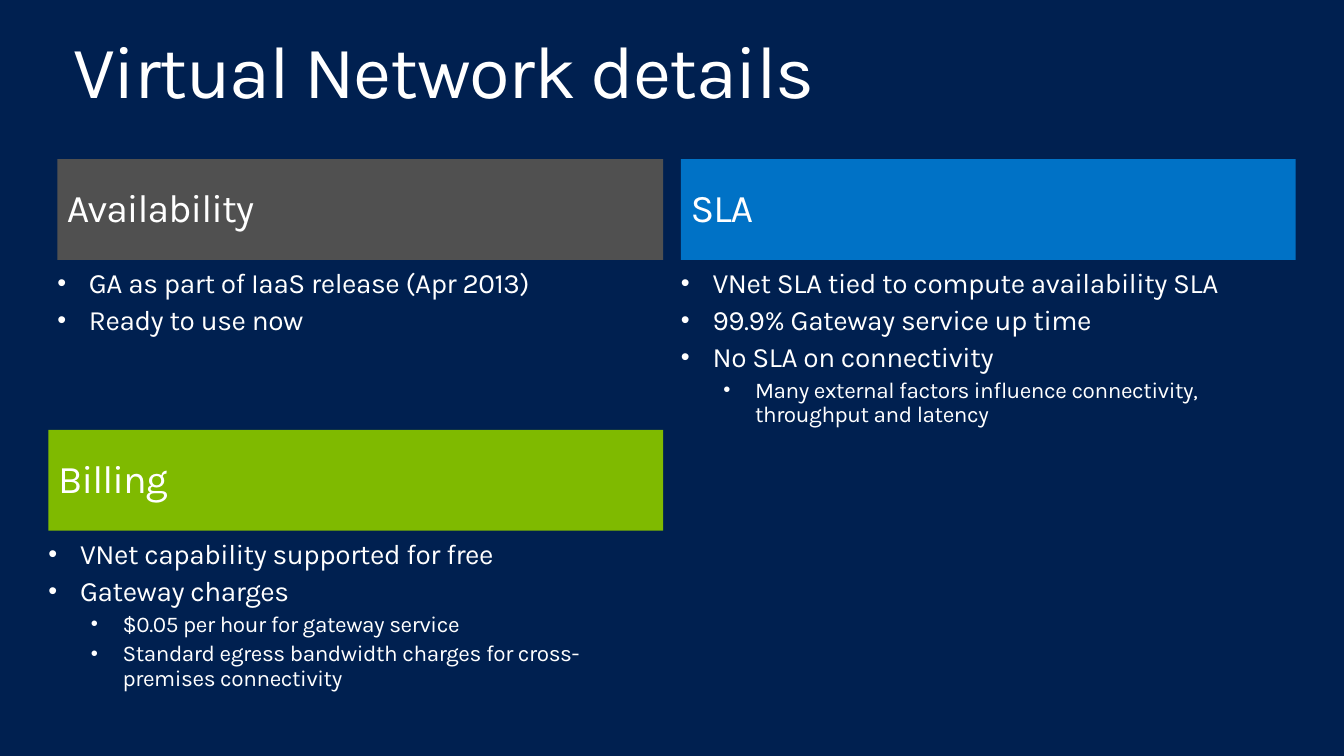
from pptx import Presentation
from pptx.dml.color import RGBColor
from pptx.enum.shapes import MSO_SHAPE
from pptx.enum.text import MSO_ANCHOR as ANCHOR, PP_ALIGN as ALIGN
from pptx.oxml import parse_xml
from pptx.oxml.ns import nsdecls
from pptx.util import Inches, Pt

TITLE = "Virtual Network details"

# Each section: heading, colour name, left, top, width, body height, (level, text) bullets
SECTIONS = [
    ("Availability", "gray", 0.58, 1.61, 6.13, 0.79, [
        (0, "GA as part of IaaS release (Apr 2013)"),
        (0, "Ready to use now"),
    ]),
    ("SLA", "blue", 6.89, 1.61, 6.22, 1.72, [
        (0, "VNet SLA tied to compute availability SLA"),
        (0, "99.9% Gateway service up time"),
        (0, "No SLA on connectivity"),
        (1, "Many external factors influence connectivity, throughput and latency"),
    ]),
    ("Billing", "green", 0.49, 4.35, 6.22, 1.65, [
        (0, "VNet capability supported for free"),
        (0, "Gateway charges"),
        (1, "$0.05 per hour for gateway service"),
        (1, "Standard egress bandwidth charges for cross-premises connectivity"),
    ]),
]

THEME = {
    "font": "Karla", "background": "002050", "text": "FFFFFF",
    "gray": "505050", "blue": "0072C6", "green": "7FBA00",
    "title": 54, "heading": 28.6, "bullets": (20.4, 16.4),
}
HEADER_HEIGHT = 1.02
BULLET_INDENTS = (0.32, 0.75)
HANGING = 0.32
SPACE_BEFORE = 0.234  # 20% of a line, as a share of the type size


def color(name):
    return RGBColor.from_string(THEME[name])


def set_frame(tf, insets, anchor=ANCHOR.TOP):
    """Set wrapping, anchor and insets (left, top, right, bottom)."""
    tf.word_wrap = True
    tf.vertical_anchor = anchor
    tf.margin_left, tf.margin_top, tf.margin_right, tf.margin_bottom = map(Inches, insets)


def write(p, text, size, spacing=0, before=0, level=None):
    """Fill a paragraph; a level makes it a bullet."""
    p.alignment = ALIGN.LEFT
    p.line_spacing = 0.9
    p.space_before = Pt(round(size * before, 1))
    if level is not None:
        p.level = level
        pPr = p._p.get_or_add_pPr()
        pPr.set("marL", str(Inches(BULLET_INDENTS[level])))
        pPr.set("indent", str(-Inches(HANGING)))
        for xml in ('<a:buSzPct {} val="90000"/>',
                    '<a:buFont {} typeface="Arial"/>',
                    '<a:buChar {} char="•"/>'):
            pPr.append(parse_xml(xml.format(nsdecls("a"))))
    r = p.add_run()
    r.text = text
    r.font.name = THEME["font"]
    r.font.size = Pt(size)
    r.font.color.rgb = color("text")
    r._r.get_or_add_rPr().set("spc", str(round(spacing * 100)))


def add_section(s, heading, fill, left, top, width, body_height, bullets):
    sp = s.shapes.add_shape(MSO_SHAPE.RECTANGLE, *map(Inches, (left, top, width, HEADER_HEIGHT)))
    sp.shadow.inherit = False
    sp.fill.solid()
    sp.fill.fore_color.rgb = color(fill)
    sp.line.fill.background()
    set_frame(sp.text_frame, (0.1, 0.1, 0.1, 0.1), ANCHOR.MIDDLE)
    write(sp.text_frame.paragraphs[0], heading, THEME["heading"], spacing=-0.7, before=SPACE_BEFORE)

    body = s.shapes.add_textbox(*map(Inches, (left, top + HEADER_HEIGHT, width, body_height)))
    tf = body.text_frame
    set_frame(tf, (0, 0.1, 0, 0))
    for i, (level, text) in enumerate(bullets):
        p = tf.add_paragraph() if i else tf.paragraphs[0]
        write(p, text, THEME["bullets"][level], spacing=-0.3, before=SPACE_BEFORE, level=level)


def main():
    prs = Presentation()
    prs.slide_width, prs.slide_height = Inches(13.6), Inches(7.65)
    s = prs.slides.add_slide(prs.slide_layouts[6])
    s.background.fill.solid()
    s.background.fill.fore_color.rgb = color("background")

    title = s.shapes.add_textbox(*map(Inches, (0.58, 0.25, 12.44, 0.74)))
    set_frame(title.text_frame, (0.16, 0.1, 0.16, 0.1))
    write(title.text_frame.paragraphs[0], TITLE, THEME["title"], spacing=-1)

    for section in SECTIONS:
        add_section(s, *section)
    prs.save("out.pptx")


if __name__ == "__main__":
    main()
